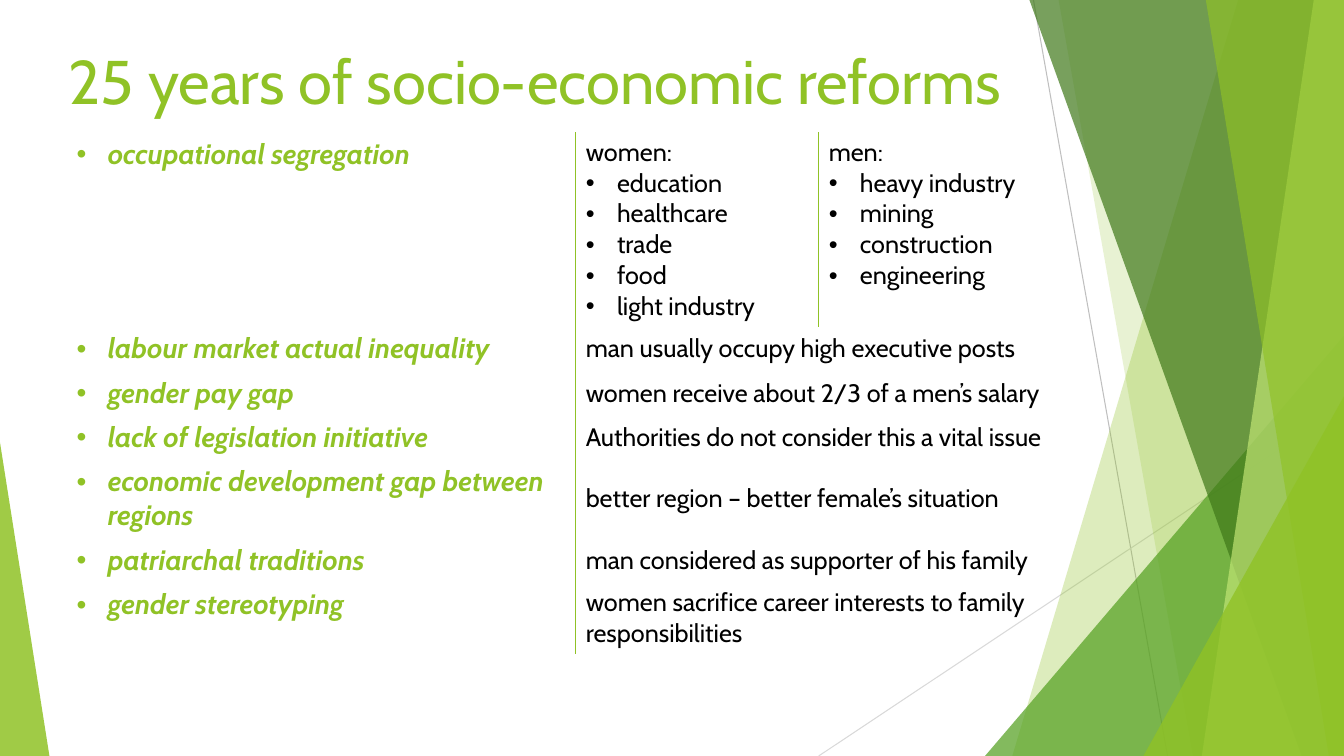
import pptx
import pptx.dml.color
import pptx.enum.shapes
import pptx.enum.text
import pptx.oxml
import pptx.oxml.ns
import pptx.util
from lxml import etree

SCALE = 9144
FONT = "Cabin"
GREEN = "90C226"
NO_GRID_STYLE = "{2D5ABB26-0587-4C30-8999-92F81FD0307C}"
BULLET_INDENT = 31
WOMEN = ["women:", "education", "healthcare", "trade", "food", "light industry"]
MEN = ["men:", "heavy industry", "mining", "construction", "engineering"]
ROWS = [
    ("occupational segregation", None, 193),
    ("labour market actual inequality", "man usually occupy high executive posts", 43),
    ("gender pay gap", "women receive about 2/3 of a men’s salary", 43),
    ("lack of legislation initiative", "Authorities do not consider this a vital issue", 43),
    ("economic development gap between regions", "better region – better female’s situation", 78),
    ("patriarchal traditions", "man considered as supporter of his family", 43),
    ("gender stereotyping", "women sacrifice career interests to family responsibilities", 70),
]


def px(length):
    """Turn px into EMU."""
    return pptx.util.Emu(round(length * SCALE))


def color(hex_value):
    """Return the colour for a hex string."""
    return pptx.dml.color.RGBColor.from_string(hex_value)


def paint(shape, hex_value, opacity):
    """Fill a shape with a translucent colour and no line."""
    shape.shadow.inherit = False
    shape.fill.solid()
    shape.fill.fore_color.rgb = color(hex_value)
    shape.line.fill.background()
    fill_color = shape.fill._xPr.find(".//" + pptx.oxml.ns.qn("a:srgbClr"))
    etree.SubElement(fill_color, pptx.oxml.ns.qn("a:alpha"), val=str(opacity * 1000))


def add_line(slide, start, end, hex_value):
    """Draw a thin straight line."""
    line = slide.shapes.add_connector(
        pptx.enum.shapes.MSO_CONNECTOR.STRAIGHT, *map(px, start + end))
    line.line.color.rgb = color(hex_value)
    line.line.width = pptx.util.Pt(0.75)
    etree.SubElement(line._element.spPr, pptx.oxml.ns.qn("a:effectLst"))


def add_triangle(slide, left, top, width, height, apex, hex_value, opacity):
    """Draw a triangle whose apex lies at a fraction of its width."""
    triangle = slide.shapes.add_shape(
        pptx.enum.shapes.MSO_SHAPE.ISOSCELES_TRIANGLE, *map(px, (left, top, width, height)))
    triangle.adjustments[0] = apex
    paint(triangle, hex_value, opacity)


def add_band(slide, box, top_x, bottom_x, hex_value, opacity):
    """Draw a band from a slanted edge to the right side of the box."""
    left, top, width, height = box
    right, bottom = left + width, top + height
    builder = slide.shapes.build_freeform(left + top_x, top, scale=SCALE)
    builder.add_line_segments(
        [(right, top), (right, bottom), (left + bottom_x, bottom)], close=True)
    paint(builder.convert_to_shape(), hex_value, opacity)


def add_facets(slide, left, top, width, height):
    """Draw the overlapping facets on the right side."""
    box = (left, top, width, height)
    right, bottom = left + width, top + height
    add_line(slide, (left + 48, top), (left + 181, bottom), "BFBFBF")
    add_line(slide, (right, top + 403), (left - 165, bottom), "D9D9D9")
    add_band(slide, box, 251, 27, GREEN, 30)
    add_band(slide, box, 73, 206, GREEN, 20)
    add_triangle(slide, left, bottom - 417, width, 417, 1, "54A021", 72)
    add_band(slide, box, 44, 314, "3F7819", 70)
    add_band(slide, box, 326, 215, "C0E474", 70)
    add_band(slide, box, 219, 341, GREEN, 65)
    add_triangle(slide, right - 199, bottom - 357, 199, 357, 1, GREEN, 80)


def add_title(slide, left, top, width, height):
    """Place and format the title."""
    title = slide.shapes.title
    slide.shapes._spTree.append(title._element)
    title.left, title.top, title.width, title.height = map(px, (left, top, width, height))
    frame = title.text_frame
    frame.text = "25 years of socio-economic reforms"
    frame.auto_size = pptx.enum.text.MSO_AUTO_SIZE.NONE
    frame.vertical_anchor = pptx.enum.text.MSO_ANCHOR.MIDDLE
    paragraph = frame.paragraphs[0]
    paragraph.alignment = pptx.enum.text.PP_ALIGN.LEFT
    set_font(paragraph, 44, GREEN)


def set_font(paragraph, size, hex_value, emphasis=False):
    """Set the font of a paragraph."""
    font = paragraph.font
    font.name, font.size = FONT, pptx.util.Pt(size)
    font.bold = font.italic = emphasis
    font.color.rgb = color(hex_value)


def add_bullet(paragraph):
    """Give a paragraph a hanging bullet."""
    properties = paragraph._p.get_or_add_pPr()
    properties.set("marL", str(px(BULLET_INDENT)))
    properties.set("indent", str(px(-BULLET_INDENT)))
    bullet_font = pptx.oxml.parse_xml(
        f'<a:buFont {pptx.oxml.ns.nsdecls("a")} typeface="Arial"/>')
    bullet = pptx.oxml.parse_xml(f'<a:buChar {pptx.oxml.ns.nsdecls("a")} char="•"/>')
    properties.insert(0, bullet_font)
    properties.insert(1, bullet)


def fill_cell(cell, lines, first_bullet, size, hex_value, emphasis=False, middle=True):
    """Write lines into a cell, with bullets from the given line on."""
    cell.fill.background()
    if middle:
        cell.vertical_anchor = pptx.enum.text.MSO_ANCHOR.MIDDLE
    cell.text_frame.text = "\n".join(lines)
    for index, paragraph in enumerate(cell.text_frame.paragraphs):
        set_font(paragraph, size, hex_value, emphasis)
        if index >= first_bullet:
            add_bullet(paragraph)


def add_divider(left_cell, right_cell):
    """Draw the green border between two neighbouring cells."""
    for cell, side in ((left_cell, "lnR"), (right_cell, "lnL")):
        border = pptx.oxml.parse_xml(
            f'<a:{side} {pptx.oxml.ns.nsdecls("a")} w="12700"><a:solidFill>'
            f'<a:srgbClr val="{GREEN}"/></a:solidFill></a:{side}>')
        cell._tc.get_or_add_tcPr().insert(0, border)


def add_reform_table(slide, left, top, column_widths):
    """Build the table of problems and how they show."""
    heights = [height for _, _, height in ROWS]
    table = slide.shapes.add_table(
        len(ROWS), len(column_widths),
        *map(px, (left, top, sum(column_widths), sum(heights)))).table
    table.first_row = table.horz_banding = False
    table._tbl.tblPr.find(pptx.oxml.ns.qn("a:tableStyleId")).text = NO_GRID_STYLE
    for column, width in zip(table.columns, column_widths):
        column.width = px(width)
    for index, (problem, detail, height) in enumerate(ROWS):
        table.rows[index].height = px(height)
        problem_cell, detail_cell, last_cell = (table.cell(index, c) for c in range(3))
        fill_cell(problem_cell, [problem], 0, 20, GREEN, emphasis=True, middle=False)
        if detail:
            detail_cell.merge(last_cell)
            fill_cell(detail_cell, [detail], 1, 18, "000000")
        else:
            fill_cell(detail_cell, WOMEN, 1, 18, "000000")
            fill_cell(last_cell, MEN, 1, 18, "000000", middle=False)
            add_divider(detail_cell, last_cell)
        add_divider(problem_cell, detail_cell)


def main():
    """Build and save the slide."""
    presentation = pptx.Presentation()
    presentation.slide_width, presentation.slide_height = px(1333), px(750)
    slide = presentation.slides.add_slide(presentation.slide_layouts[5])
    add_facets(slide, 977, 0, 356, 750)
    add_triangle(slide, 0, 439, 49, 311, 0, GREEN, 85)
    add_title(slide, 58, 15, 1089, 129)
    add_reform_table(slide, 66, 131, (505, 241, 278))
    presentation.save("out.pptx")


if __name__ == "__main__":
    main()
